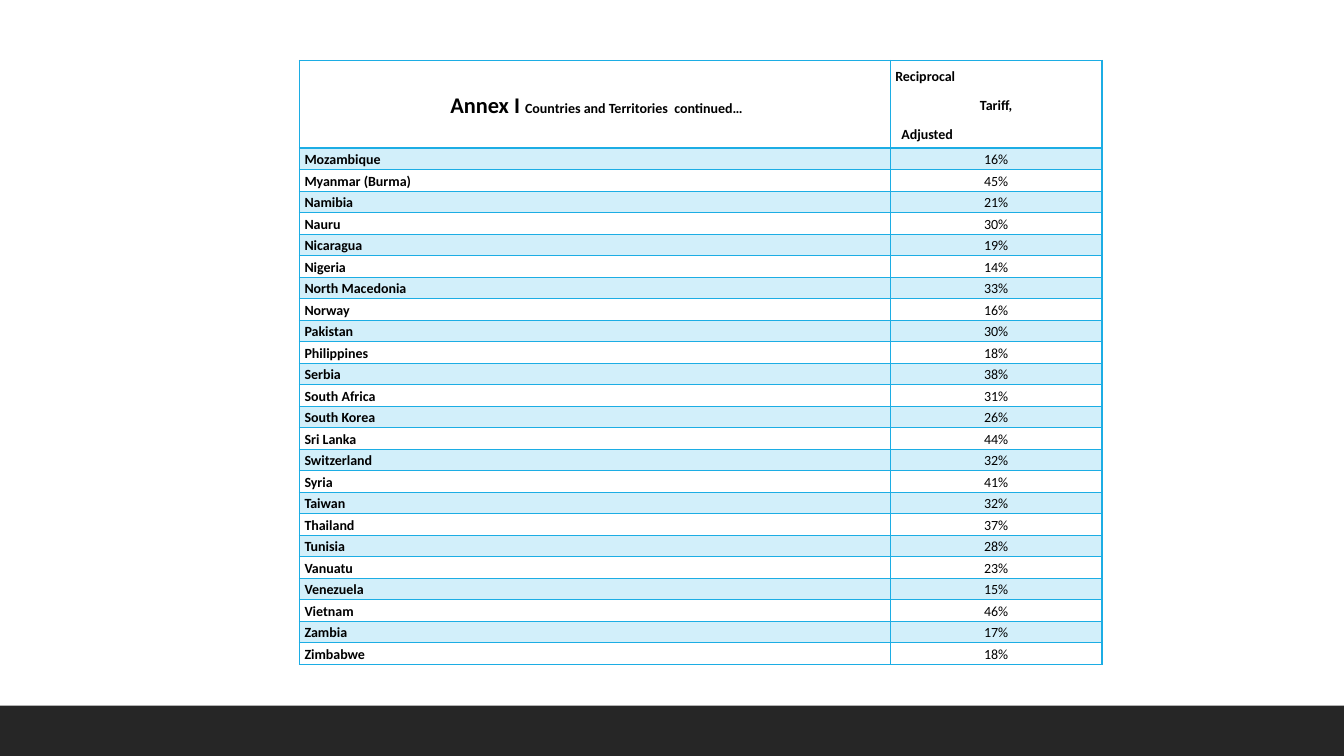
from pptx import Presentation
from pptx.dml.color import RGBColor
from pptx.enum.shapes import MSO_SHAPE
from pptx.enum.text import MSO_ANCHOR, PP_ALIGN
from pptx.oxml.ns import qn
from pptx.util import Inches, Pt
from lxml.etree import SubElement

BLACK = RGBColor(0x00, 0x00, 0x00)
CHARCOAL = RGBColor(0x26, 0x26, 0x26)
CYAN = RGBColor(0x1C, 0xAD, 0xE4)
PALE_CYAN = RGBColor(0xD2, 0xEF, 0xFA)

TARIFFS = [
    ("Mozambique", 16), ("Myanmar (Burma)", 45), ("Namibia", 21),
    ("Nauru", 30), ("Nicaragua", 19), ("Nigeria", 14),
    ("North Macedonia", 33), ("Norway", 16), ("Pakistan", 30),
    ("Philippines", 18), ("Serbia", 38), ("South Africa", 31),
    ("South Korea", 26), ("Sri Lanka", 44), ("Switzerland", 32),
    ("Syria", 41), ("Taiwan", 32), ("Thailand", 37),
    ("Tunisia", 28), ("Vanuatu", 23), ("Venezuela", 15),
    ("Vietnam", 46), ("Zambia", 17), ("Zimbabwe", 18),
]


def write(paragraph, text, size=10, bold=True, align=PP_ALIGN.LEFT, indent=0):
    paragraph.alignment = align
    paragraph.line_spacing = 1.07
    paragraph.space_after = Pt(8)
    if indent:
        paragraph._p.get_or_add_pPr().set("marL", str(Inches(indent)))
    run = paragraph.add_run()
    run.text = text
    run.font.name = "Calibri"
    run.font.size = Pt(size)
    run.font.bold = bold
    run.font.color.rgb = BLACK


def dress(cell, banded, bottom_width):
    cell.margin_left = Inches(0.05)
    cell.margin_top = cell.margin_right = Inches(0.02)
    cell.margin_bottom = 0
    properties = cell._tc.get_or_add_tcPr()
    for side, width in (("L", 1), ("R", 1), ("T", 1), ("B", bottom_width)):
        border = SubElement(properties, qn(f"a:ln{side}"), w=str(Pt(width)))
        paint = SubElement(border, qn("a:solidFill"))
        SubElement(paint, qn("a:srgbClr"), val=str(CYAN))
    if banded:
        cell.fill.solid()
        cell.fill.fore_color.rgb = PALE_CYAN
    else:
        cell.fill.background()


deck = Presentation()
deck.slide_width = Inches(13.33)
deck.slide_height = Inches(7.5)
slide = deck.slides.add_slide(deck.slide_layouts[6])

footer_height = deck.slide_height // 15
footer = slide.shapes.add_shape(
    MSO_SHAPE.RECTANGLE, 0, deck.slide_height - footer_height,
    deck.slide_width, footer_height)
footer.shadow.inherit = False
footer.fill.solid()
footer.fill.fore_color.rgb = CHARCOAL
footer.line.fill.background()

annex_height = Inches(6)
header_height = Inches(0.87)
country_width, tariff_width = Inches(5.86), Inches(2.1)
annex = slide.shapes.add_table(
    len(TARIFFS) + 1, 2, Inches(2.97), Inches(0.6),
    country_width + tariff_width, annex_height).table
annex.first_row = False
annex.horz_banding = False
annex.columns[0].width = country_width
annex.columns[1].width = tariff_width
for row in annex.rows:
    row.height = (annex_height - header_height) // len(TARIFFS)
annex.rows[0].height = header_height

title, tariff_heading = annex.rows[0].cells
for heading in (title, tariff_heading):
    dress(heading, banded=False, bottom_width=2)
    heading.vertical_anchor = MSO_ANCHOR.MIDDLE

title_line = title.text_frame.paragraphs[0]
write(title_line, "Annex I ", size=16, align=PP_ALIGN.CENTER)
write(title_line, "Countries and Territories  continued…", align=PP_ALIGN.CENTER)

heading_text = tariff_heading.text_frame
write(heading_text.paragraphs[0], "Reciprocal ", align=PP_ALIGN.JUSTIFY)
write(heading_text.add_paragraph(), "Tariff, ", align=PP_ALIGN.CENTER)
write(heading_text.add_paragraph(), "Adjusted", indent=0.06)

for number, (country, tariff) in enumerate(TARIFFS, start=1):
    country_cell, tariff_cell = annex.rows[number].cells
    for cell in (country_cell, tariff_cell):
        dress(cell, banded=number % 2 == 1, bottom_width=1)
    write(country_cell.text_frame.paragraphs[0], country)
    write(tariff_cell.text_frame.paragraphs[0], f"{tariff}% ",
          bold=False, align=PP_ALIGN.CENTER)

deck.save("out.pptx")
